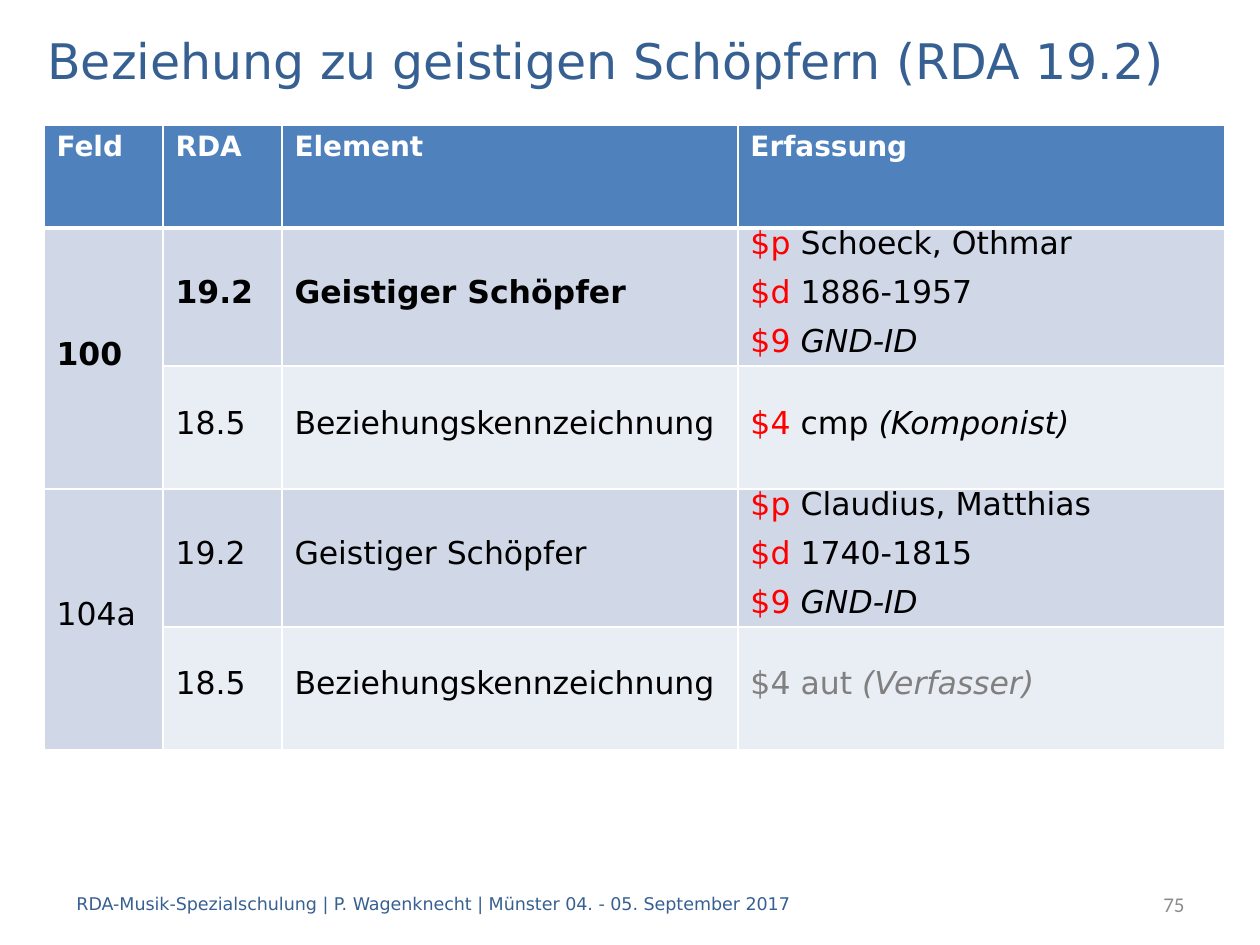
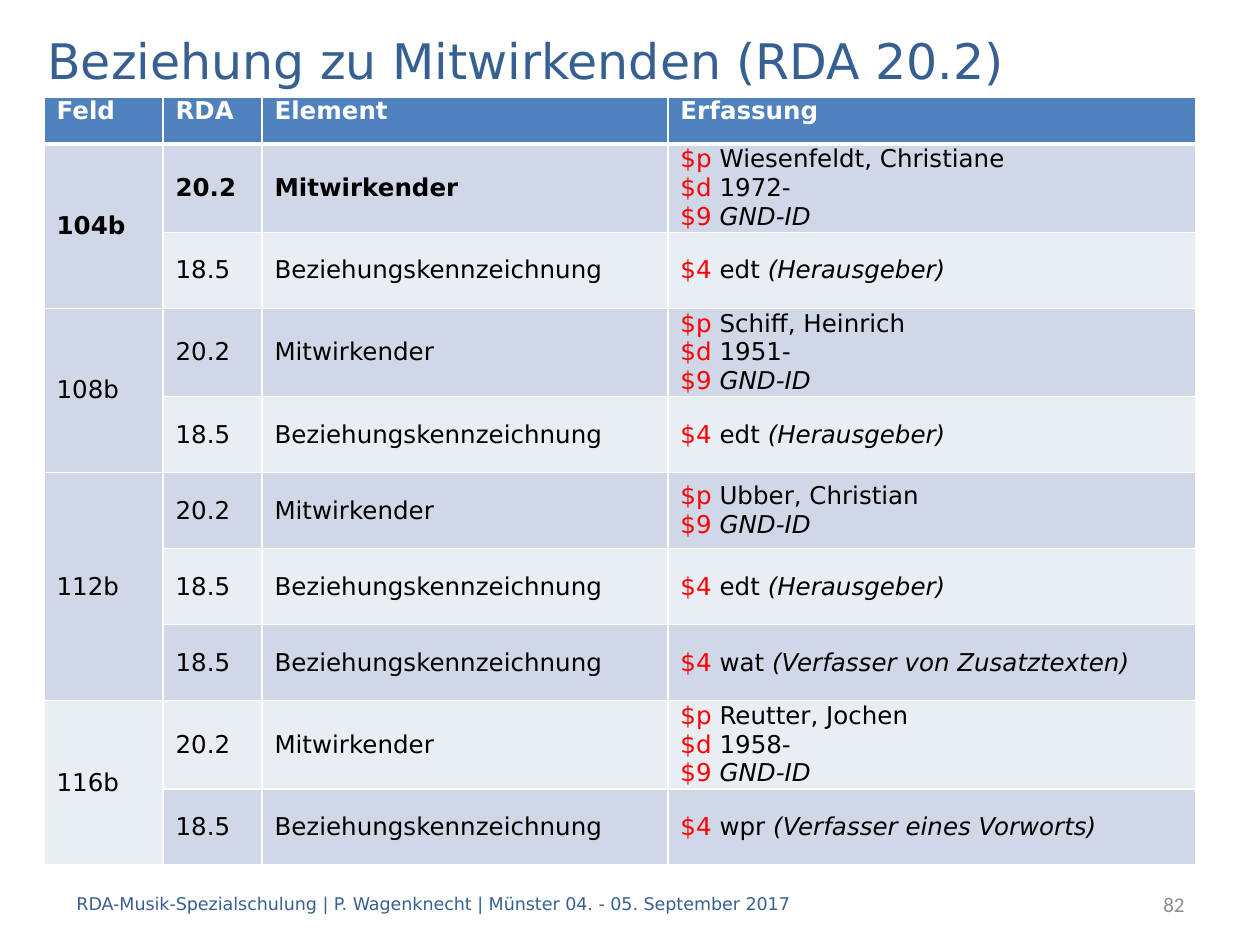
from lxml.etree import SubElement
from pptx import Presentation
from pptx.dml.color import RGBColor
from pptx.enum.text import MSO_ANCHOR, PP_ALIGN
from pptx.oxml.ns import qn
from pptx.util import Emu, Pt

EMU_PER_PX = 914400 / 126
BODY_FONT = "DejaVu Sans"
NUMBER_FONT = "Calibri"
COLORS = {
    "title": "376092",
    "number": "8C8C8C",
    "header": "4F81BD",
    "band_dark": "D0D8E8",
    "band_light": "E9EDF4",
    "white": "FFFFFF",
    "text": "000000",
    "subfield": "FF0000",
    "dimmed": "808080",
}
FOOTER = "RDA-Musik-Spezialschulung | P. Wagenknecht | Münster 04. - 05. September 2017"
HEADINGS = ["Feld", "RDA", "Element", "Erfassung"]
RELATION = "Beziehungskennzeichnung"
CREATOR = "Geistiger Schöpfer"
CONTRIBUTOR = "Mitwirkender"
GND = ("$9 ", "", "GND-ID")
EDITOR = ("$4 ", "edt ", "(Herausgeber)")

# Each field: field number, then rows of RDA number, element and entry lines.
# Each entry line: subfield code, plain text, italic text.
SLIDES = [
    {
        "title": "Beziehung zu geistigen Schöpfern (RDA 19.2)",
        "number": "75",
        "top": 125,
        "columns": [119, 119, 456, 487],
        "header_height": 103, "row_height": 123, "tall_height": 138,
        "inset": 6, "header_size": 16, "size": 18,
        "line_pt": 16, "gap_pt": 6,
        "fields": [
            ("100", [
                ("19.2", CREATOR, [("$p ", "Schoeck, Othmar", ""), ("$d ", "1886-1957", ""), GND]),
                ("18.5", RELATION, [("$4 ", "cmp ", "(Komponist)")]),
            ]),
            ("104a", [
                ("19.2", CREATOR, [("$p ", "Claudius, Matthias", ""), ("$d ", "1740-1815", ""), GND]),
                ("18.5", RELATION, [("$4 ", "aut ", "(Verfasser)")]),
            ]),
        ],
        "dimmed_codes": ["aut "],
    },
    {
        "title": "Beziehung zu Mitwirkenden (RDA 20.2)",
        "number": "82",
        "top": 97,
        "columns": [119, 99, 406, 528],
        "header_height": 47, "row_height": 76, "tall_height": 86,
        "inset": 0, "header_size": 14, "size": 14,
        "line_pt": None, "gap_pt": 0,
        "fields": [
            ("104b", [
                ("20.2", CONTRIBUTOR, [("$p ", "Wiesenfeldt, Christiane", ""), ("$d ", "1972-", ""), GND]),
                ("18.5", RELATION, [EDITOR]),
            ]),
            ("108b", [
                ("20.2", CONTRIBUTOR, [("$p ", "Schiff, Heinrich", ""), ("$d ", "1951-", ""), GND]),
                ("18.5", RELATION, [EDITOR]),
            ]),
            ("112b", [
                ("20.2", CONTRIBUTOR, [("$p ", "Ubber, Christian", ""), GND]),
                ("18.5", RELATION, [EDITOR]),
                ("18.5", RELATION, [("$4 ", "wat ", "(Verfasser von Zusatztexten)")]),
            ]),
            ("116b", [
                ("20.2", CONTRIBUTOR, [("$p ", "Reutter, Jochen", ""), ("$d ", "1958-", ""), GND]),
                ("18.5", RELATION, [("$4 ", "wpr ", "(Verfasser eines Vorworts)")]),
            ]),
        ],
        "dimmed_codes": [],
    },
]


def px(length):
    return Emu(round(length * EMU_PER_PX))


def add_run(paragraph, text, size, color, font=BODY_FONT, bold=False, italic=False):
    run = paragraph.add_run()
    run.text = text
    run.font.name = font
    run.font.size = Pt(size)
    run.font.bold = bold
    run.font.italic = italic
    run.font.color.rgb = RGBColor.from_string(COLORS[color])


prs = Presentation()
prs.slide_width, prs.slide_height = px(1260), px(945)

for content in SLIDES:
    slide = prs.slides.add_slide(prs.slide_layouts[6])

    # Title, footer and slide number
    for text, box, size, color, font, align in [
        (content["title"], (35, 24, 1191, 71), 28, "title", BODY_FONT, PP_ALIGN.LEFT),
        (FOOTER, (64, 879, 1052, 50), 10, "title", BODY_FONT, PP_ALIGN.LEFT),
        (content["number"], (997, 879, 200, 50), 12, "number", NUMBER_FONT, PP_ALIGN.RIGHT),
    ]:
        frame = slide.shapes.add_textbox(*map(px, box)).text_frame
        frame.word_wrap = True
        frame.vertical_anchor = MSO_ANCHOR.MIDDLE
        frame.paragraphs[0].alignment = align
        add_run(frame.paragraphs[0], text, size, color, font)

    # Every cell becomes a list of lines, every line a list of (text, color, italic)
    grid = [[[[(heading, "white", False)]] for heading in HEADINGS]]
    merges = []
    for field_number, rows in content["fields"]:
        merges.append((len(grid), len(grid) + len(rows) - 1))
        for position, (rda, element, entry) in enumerate(rows):
            labels = [field_number if position == 0 else "", rda, element]
            cells = [[[(label, "text", False)]] if label else [] for label in labels]
            lines = []
            for code, plain, italic in entry:
                dimmed = plain in content["dimmed_codes"]
                code_color, color = ("dimmed", "dimmed") if dimmed else ("subfield", "text")
                parts = [(code, code_color, False), (plain, color, False), (italic, color, True)]
                lines.append([part for part in parts if part[0]])
            grid.append(cells + [lines])

    heights = [content["header_height"]] + [
        content["tall_height"] if len(row[3]) == 3 else content["row_height"] for row in grid[1:]
    ]
    table = slide.shapes.add_table(
        len(grid), len(HEADINGS), px(44), px(content["top"]),
        px(sum(content["columns"])), px(sum(heights)),
    ).table
    table.horz_banding = False
    for column, width in zip(table.columns, content["columns"]):
        column.width = px(width)
    for row, height in zip(table.rows, heights):
        row.height = px(height)

    for r, row in enumerate(grid):
        is_header = r == 0
        fill = "header" if is_header else "band_dark" if r % 2 else "band_light"
        for c, lines in enumerate(row):
            cell = table.cell(r, c)
            cell.margin_top = cell.margin_bottom = px(content["inset"])
            cell.vertical_anchor = MSO_ANCHOR.TOP if is_header else MSO_ANCHOR.MIDDLE
            for side in "LRTB":
                heavy = (r, side) in [(0, "B"), (1, "T")]
                border = SubElement(cell._tc.get_or_add_tcPr(), qn(f"a:ln{side}"), w=str(Pt(3 if heavy else 1)))
                SubElement(SubElement(border, qn("a:solidFill")), qn("a:srgbClr"), val=COLORS["white"])
            cell.fill.solid()
            cell.fill.fore_color.rgb = RGBColor.from_string(COLORS[fill])

            for i, line in enumerate(lines):
                paragraph = cell.text_frame.add_paragraph() if i else cell.text_frame.paragraphs[0]
                if not is_header and content["line_pt"]:
                    paragraph.line_spacing = Pt(content["line_pt"])
                    paragraph.space_before = Pt(content["gap_pt"] if i else 0)
                    paragraph.space_after = Pt(content["gap_pt"])
                size = content["header_size"] if is_header else content["size"]
                bold = is_header or (r == 1 and c < 3)
                for text, color, italic in line:
                    add_run(paragraph, text, size, color, bold=bold, italic=italic)

    for first, last in merges:
        table.cell(first, 0).merge(table.cell(last, 0))

prs.save("out.pptx")
